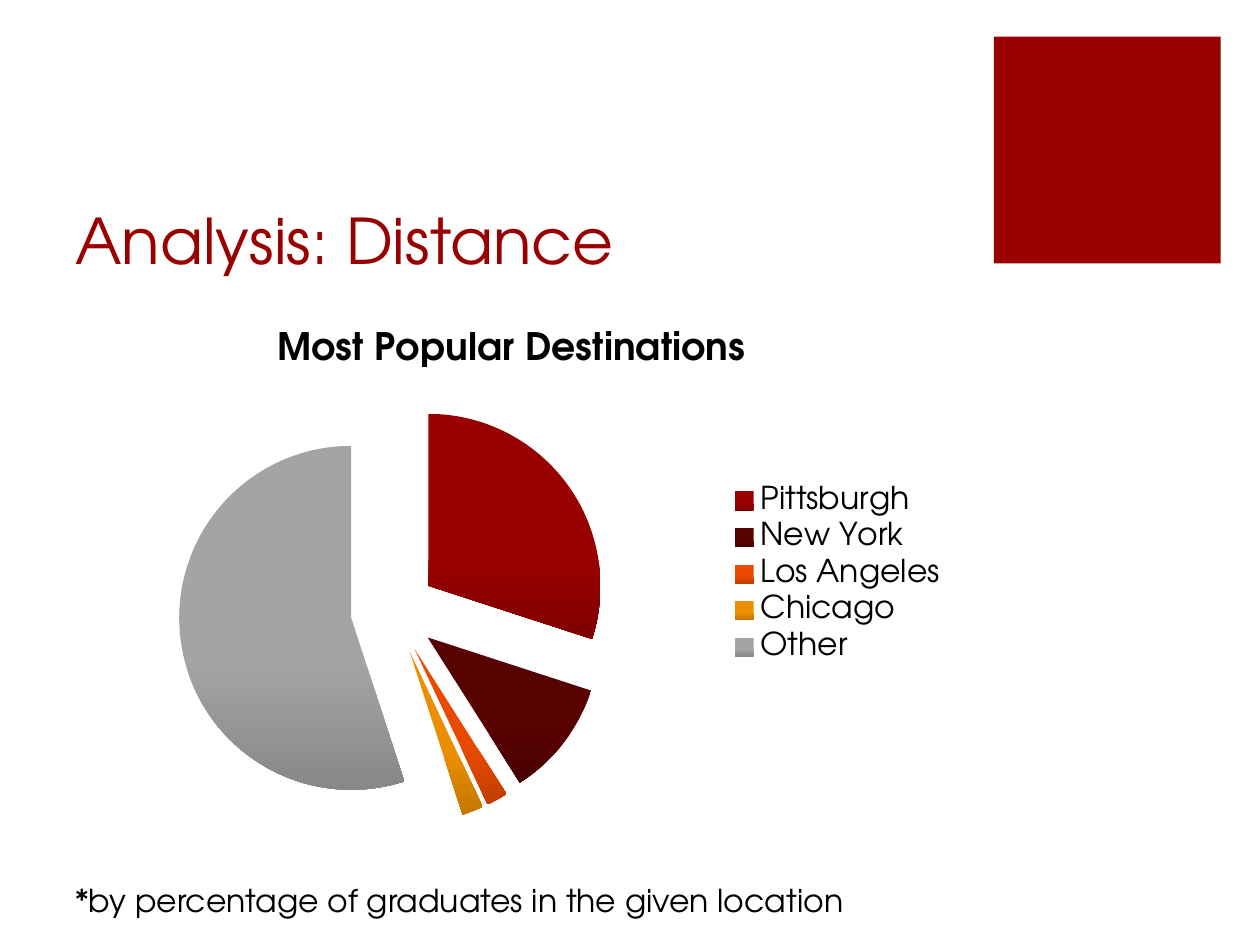
from pptx import Presentation
from pptx.chart.data import CategoryChartData
from pptx.dml.color import RGBColor
from pptx.enum import chart as ch, shapes, text
from pptx.oxml import parse_xml
from pptx.oxml.ns import nsdecls
from pptx.util import Pt

RED, BLACK = "990000", "000000"


def rgb(hex_color, shade=1):
    """Colour from a hex string, darkened when shade is below 1."""
    return RGBColor(*(round(c * shade) for c in RGBColor.from_string(hex_color)))


class SlideBuilder:
    font_name = "TeX Gyre Adventor"
    body_size = 18

    def __init__(self, slide):
        self.slide = slide

    def style(self, font, size, color, bold=False):
        font.name, font.size, font.bold = self.font_name, Pt(size), bold
        font.color.rgb = rgb(color)

    def block(self, left, top, width, height, color):
        block = self.slide.shapes.add_shape(
            shapes.MSO_SHAPE.RECTANGLE, Pt(left), Pt(top), Pt(width), Pt(height))
        block.shadow.inherit = False
        block.fill.solid()
        block.fill.fore_color.rgb = rgb(color)
        block.line.fill.background()

    def label(self, left, top, width, height, words, size, color,
              anchor=text.MSO_ANCHOR.TOP, wrap=True):
        frame = self.slide.shapes.add_textbox(
            Pt(left), Pt(top), Pt(width), Pt(height)).text_frame
        frame.word_wrap, frame.vertical_anchor = wrap, anchor
        paragraph = frame.paragraphs[0]
        paragraph.text = words
        self.style(paragraph.font, size, color)

    def pie(self, left, top, width, height, title, slices, explosion):
        data = CategoryChartData()
        data.categories = [name for name, _, _ in slices]
        data.add_series(title, [value for _, value, _ in slices])
        chart = self.slide.shapes.add_chart(
            ch.XL_CHART_TYPE.PIE, Pt(left), Pt(top), Pt(width), Pt(height), data).chart
        self.style(chart.font, self.body_size, BLACK)

        # Heading and legend
        chart.has_title = True
        heading = chart.chart_title.text_frame.paragraphs[0]
        heading.text = title
        self.style(heading.font, 1.2 * self.body_size, BLACK, bold=True)
        chart.chart_title.include_in_layout = False
        chart.has_legend = True
        chart.legend.position = ch.XL_LEGEND_POSITION.RIGHT
        chart.legend.include_in_layout = False
        self.style(chart.legend.font, self.body_size, BLACK)

        # Slices, darker towards the bottom
        plot = chart.plots[0]
        plot.vary_by_categories = True
        series = plot.series[0]
        for index, (_, _, color) in enumerate(slices):
            look = series.points[index].format
            look.line.fill.background()
            look.fill.gradient()
            look.fill.gradient_angle = 270
            for stop, (position, shade) in zip(
                    look.fill.gradient_stops, ((0.62, 1), (1, 0.83))):
                stop.position = position
                stop.color.rgb = rgb(color, shade)

        # Pull the slices apart
        first_point = series._element.find(
            "{http://schemas.openxmlformats.org/drawingml/2006/chart}dPt")
        first_point.addprevious(parse_xml(
            f'<c:explosion {nsdecls("c")} val="{explosion}"/>'))


def main():
    deck = Presentation()
    deck.slide_width, deck.slide_height = Pt(720), Pt(540)
    builder = SlideBuilder(deck.slides.add_slide(deck.slide_layouts[6]))

    # Corner block and title
    builder.block(568, 21, 129.6, 129.6, RED)
    builder.label(36, 72, 513, 90, "Analysis: Distance", 36, RED,
                  anchor=text.MSO_ANCHOR.BOTTOM)

    # Destinations
    destinations = [
        ("Pittsburgh", 30, RED),
        ("New York", 11, "580101"),
        ("Los Angeles", 2, "E94A00"),
        ("Chicago", 2, "EB8F00"),
        ("Other", 55, "A4A4A4"),
    ]
    builder.pie(36, 174, 513, 308, "Most Popular Destinations", destinations, 25)

    # Footnote
    builder.label(36, 500, 460, 29, "*by percentage of graduates in the given location",
                  builder.body_size, BLACK, wrap=False)

    deck.save("out.pptx")


if __name__ == "__main__":
    main()
